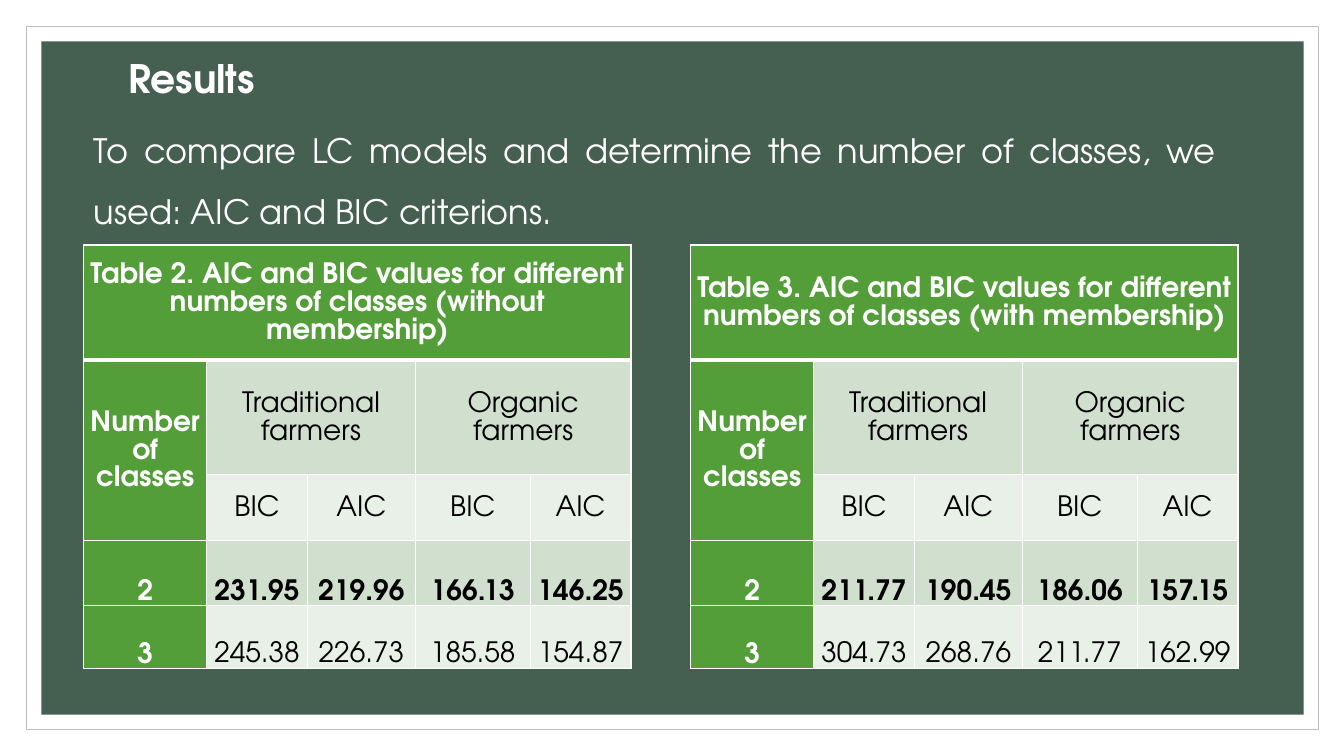
"""Build the results slide with two tables of AIC and BIC values."""
from lxml import etree
from pptx import Presentation
from pptx.dml.color import RGBColor
from pptx.enum.shapes import MSO_SHAPE
from pptx.enum.text import MSO_ANCHOR, PP_ALIGN
from pptx.oxml.ns import qn
from pptx.util import Inches, Pt

RECTANGLE = MSO_SHAPE.RECTANGLE
MIDDLE, BOTTOM, TOP = MSO_ANCHOR.MIDDLE, MSO_ANCHOR.BOTTOM, MSO_ANCHOR.TOP
LEFT, CENTER, JUSTIFY = PP_ALIGN.LEFT, PP_ALIGN.CENTER, PP_ALIGN.JUSTIFY
FONT = "TeX Gyre Adventor"
COLORS = {
    "white": "FFFFFF", "black": "000000", "frame": "BFBFBF", "panel": "455F51",
    "green": "549E39", "dark band": "D1DFCE", "light band": "E9F0E8",
}


def write(paragraph, text, size, color, bold, align, spacing):
    paragraph.alignment = align
    paragraph.line_spacing = spacing
    span = paragraph.add_run()
    span.text = text
    span.font.name = FONT
    span.font.size = Pt(size)
    span.font.bold = bold
    span.font.color.rgb = RGBColor.from_string(COLORS[color])


def add_border(cell, side, width):
    line = etree.SubElement(cell._tc.get_or_add_tcPr(), qn(f"a:{side}"), w=str(Pt(width)))
    fill = etree.SubElement(line, qn("a:solidFill"))
    etree.SubElement(fill, qn("a:srgbClr"), val=COLORS["white"])


deck = Presentation()
deck.slide_width, deck.slide_height = Inches(13.33), Inches(7.5)
page = deck.slides.add_slide(deck.slide_layouts[1])

backdrops = [
    ((0.26, 0.26, 12.82, 6.98), "white", "frame"),
    ((0.41, 0.41, 12.52, 6.68), "panel", None),
]
for order, (place, fill, outline) in enumerate(backdrops):
    panel = page.shapes.add_shape(RECTANGLE, *map(Inches, place))
    panel.shadow.inherit = False
    panel.fill.solid()
    panel.fill.fore_color.rgb = RGBColor.from_string(COLORS[fill])
    if outline:
        panel.line.color.rgb = RGBColor.from_string(COLORS[outline])
        panel.line.width = Pt(0.5)
    else:
        panel.line.fill.background()
    page.shapes._spTree.insert(2 + order, panel._element)

title, body = page.placeholders
title.left, title.top, title.width, title.height = map(Inches, (1.17, 0.42, 11, 0.76))
title.text_frame.vertical_anchor = MIDDLE
write(title.text_frame.paragraphs[0], "Results", 28, "white", True, LEFT, 0.9)

body.left, body.top, body.width, body.height = map(Inches, (0.83, 1.04, 11.33, 4.3))
body.text_frame.vertical_anchor = TOP
intro = body.text_frame.paragraphs[0]
write(intro, "To compare LC models and determine the number of classes, "
      "we used: AIC and BIC criterions.", 24, "white", False, JUSTIFY, 1.5)
intro.space_before = Pt(9)
intro_properties = intro._p.get_or_add_pPr()
intro_properties.set("marL", "0")
intro_properties.set("indent", "0")
etree.SubElement(intro_properties, qn("a:buNone"))

column_widths = [1.22, 1, 1.07, 1.14, 1]
row_heights = [1.14, 1.14, 0.65, 0.65, 0.62]
merges = [((0, 0), (0, 4)), ((1, 0), (2, 0)), ((1, 1), (1, 2)), ((1, 3), (1, 4))]
headings = [
    ["Number of classes", "Traditional farmers", "", "Organic farmers", ""],
    ["", "BIC", "AIC", "BIC", "AIC"],
]
tables = [
    (0.83, "Table 2. AIC and BIC values for diﬀerent numbers of classes (without membership)",
     [["2", "231.95", "219.96", "166.13", "146.25"],
      ["3", "245.38", "226.73", "185.58", "154.87"]]),
    (6.85, "Table 3. AIC and BIC values for diﬀerent numbers of classes (with membership)",
     [["2", "211.77", "190.45", "186.06", "157.15"],
      ["3", "304.73", "268.76", "211.77", "162.99"]]),
]

for left, caption, values in tables:
    table = page.shapes.add_table(
        5, 5, Inches(left), Inches(2.43), Inches(sum(column_widths)), Inches(sum(row_heights))
    ).table
    for column, width in zip(table.columns, column_widths):
        column.width = Inches(width)
    for row, height in zip(table.rows, row_heights):
        row.height = Inches(height)
    for first, last in merges:
        table.cell(*first).merge(table.cell(*last))

    contents = [[caption, "", "", "", ""]] + headings + values
    for r, texts in enumerate(contents):
        for c, text in enumerate(texts):
            cell = table.cell(r, c)
            is_heading = r == 0 or c == 0
            band = "dark band" if r % 2 else "light band"
            cell.margin_left = cell.margin_right = Inches(0.05)
            cell.margin_top, cell.margin_bottom = Inches(0.01), 0
            cell.vertical_anchor = BOTTOM if r > 2 else MIDDLE
            for side in ("lnL", "lnR", "lnT", "lnB"):
                thick = (r, side) in ((0, "lnB"), (1, "lnT"))
                add_border(cell, side, 3 if thick else 1)
            cell.fill.solid()
            cell.fill.fore_color.rgb = RGBColor.from_string(COLORS["green" if is_heading else band])
            if text:
                paragraph = cell.text_frame.paragraphs[0]
                write(paragraph, text, 20, "white" if is_heading else "black",
                      is_heading or r == 3, CENTER, 1.07)
                paragraph.space_after = Pt(8)

deck.save("out.pptx")
